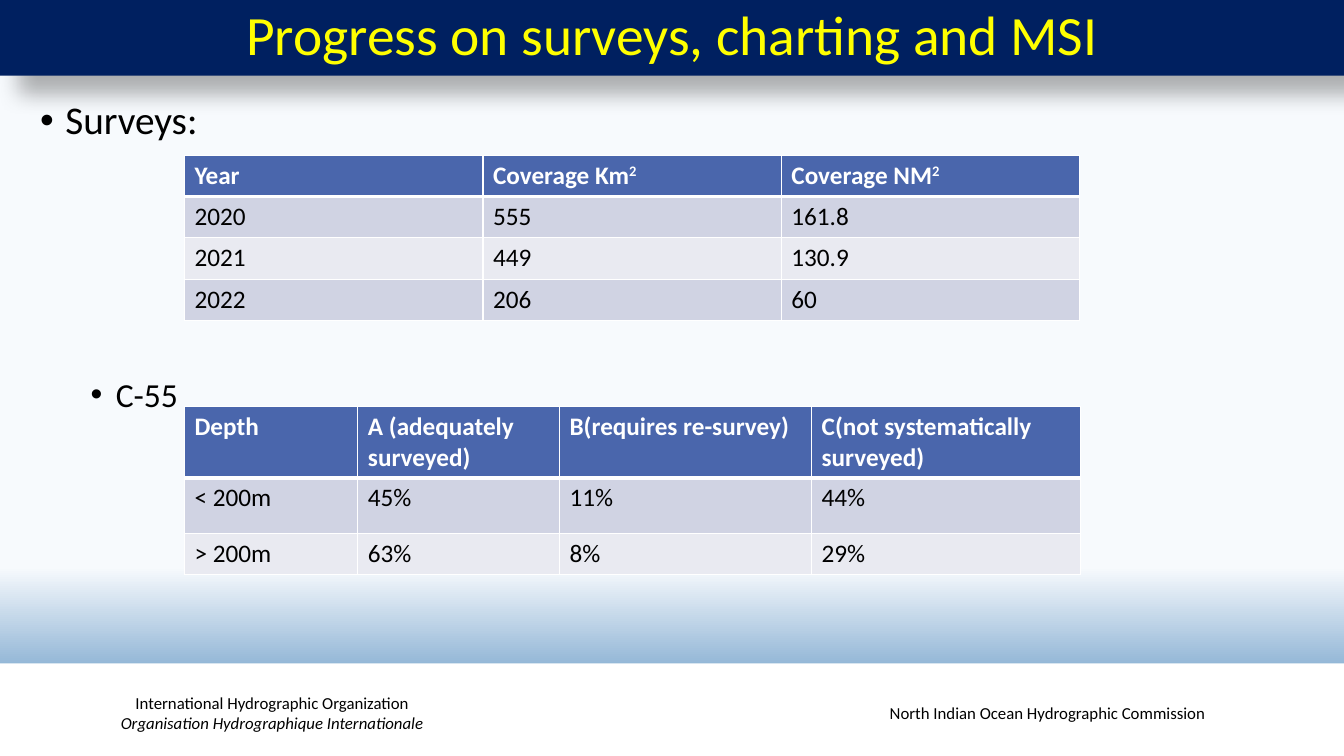
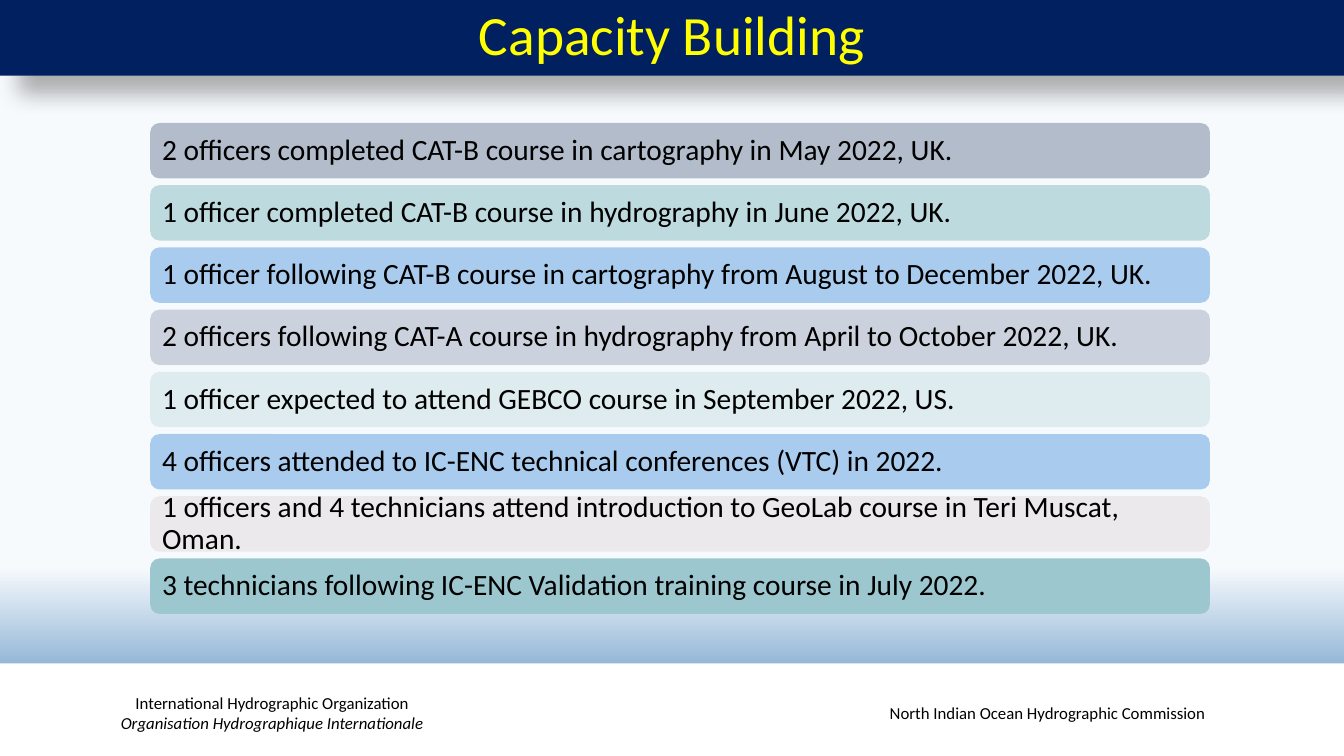
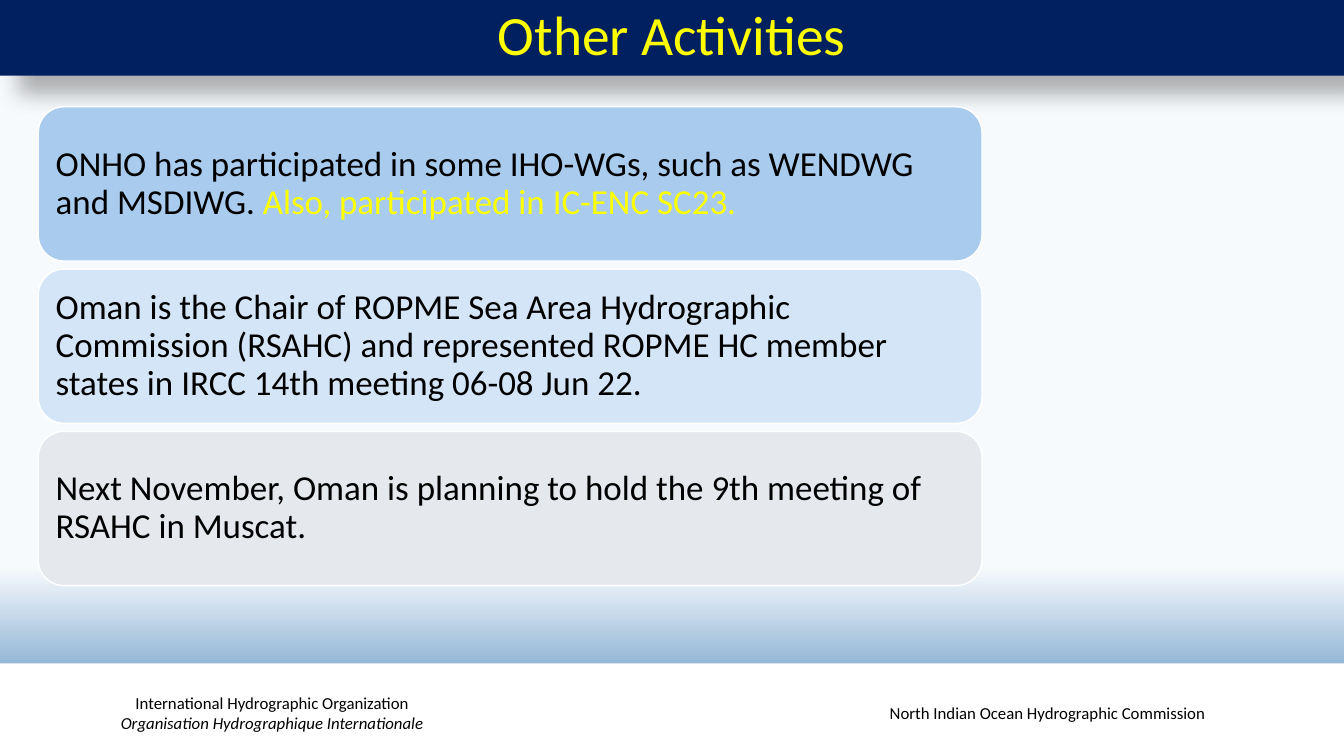
from lxml.etree import SubElement
from pptx import Presentation
from pptx.dml.color import RGBColor
from pptx.enum.shapes import MSO_SHAPE as Shape
from pptx.enum.text import MSO_ANCHOR as Anchor, MSO_AUTO_SIZE as AutoSize, PP_ALIGN as Align
from pptx.oxml.ns import qn
from pptx.util import Inches, Pt

NAVY, YELLOW, WHITE, BLACK = "002060", "FFFF00", "FFFFFF", "000000"
HEADER, BANDS = "4A66AC", ("D0D3E3", "E9EAF1")
SKY, DEEP = "F7FAFD", "3477B2"


def rgb(value):
    """Turn a hex string into a colour."""
    return RGBColor.from_string(value)


def add_solid(parent, value, alpha=None):
    """Append a colour element, with an optional opacity in percent."""
    color = SubElement(parent, qn("a:srgbClr"), val=value)
    if alpha is not None:
        SubElement(color, qn("a:alpha"), val=str(alpha * 1000))


class Deck:
    """Holds the shared style and the current slide."""

    font = "Calibri"

    def __init__(self):
        """Open a presentation with the gradient on its master."""
        self.prs = Presentation()
        self.prs.slide_width, self.prs.slide_height = Inches(13.33), Inches(7.5)
        sky = self.prs.slide_master.background.fill
        sky.gradient()
        sky.gradient_angle = 270
        for stop, position, color in zip(sky.gradient_stops, (0.75, 1), (SKY, DEEP)):
            stop.position = position
            stop.color.rgb = rgb(color)

    def style(self, font, size, color=BLACK, bold=False):
        """Apply the deck font."""
        font.name, font.size, font.bold = self.font, Pt(size), bold
        font.color.rgb = rgb(color)

    def slide(self, title):
        """Start a slide with its title band and footer."""
        layout = self.prs.slide_layouts.get_by_name("Title Only")
        self.page = self.prs.slides.add_slide(layout)
        self.title(title)
        self.panel(Shape.RECTANGLE, 0, 6.58, 13.33, 0.92, WHITE)
        self.footer(0.45, "International Hydrographic Organization\n"
                          "Organisation Hydrographique Internationale")
        self.footer(8.14, "North Indian Ocean Hydrographic Commission")

    def title(self, text):
        """Format the title placeholder as a band with a shadow."""
        band = self.page.shapes.title
        band.left, band.top = Inches(0), Inches(0)
        band.width, band.height = Inches(13.33), Inches(0.75)
        band.fill.solid()
        band.fill.fore_color.rgb = rgb(NAVY)
        effects = SubElement(band._element.spPr, qn("a:effectLst"))
        shadow = SubElement(effects, qn("a:outerShdw"), blurRad=str(Pt(15)),
                            dist=str(Pt(18)), dir=str(45 * 60000),
                            algn="tl", rotWithShape="0")
        add_solid(shadow, BLACK, 30)
        frame = band.text_frame
        frame.text = text
        frame.auto_size, frame.vertical_anchor = AutoSize.NONE, Anchor.MIDDLE
        heading = frame.paragraphs[0]
        heading.alignment, heading.line_spacing = Align.CENTER, 0.9
        self.style(heading.runs[0].font, 39.6, YELLOW)

    def panel(self, kind, left, top, width, height, fill, line=None):
        """Draw a flat filled shape."""
        shape = self.page.shapes.add_shape(
            kind, Inches(left), Inches(top), Inches(width), Inches(height))
        shape.shadow.inherit = False
        shape.fill.solid()
        shape.fill.fore_color.rgb = rgb(fill)
        if line:
            shape.line.color.rgb = rgb(line)
            shape.line.width = Pt(1)
        else:
            shape.line.fill.background()
        return shape

    def text_box(self, left, top, width, height):
        """Add an empty wrapping text box and return its frame."""
        box = self.page.shapes.add_textbox(
            Inches(left), Inches(top), Inches(width), Inches(height))
        box.text_frame.word_wrap = True
        return box.text_frame

    def footer(self, left, text):
        """Write a footer line, any second line in italics."""
        frame = self.text_box(left, 6.87, 4.5, 0.4)
        frame.vertical_anchor = Anchor.MIDDLE
        line = frame.paragraphs[0]
        line.text = text.replace("\n", "\v")
        line.alignment = Align.CENTER
        for index, run in enumerate(line.runs):
            self.style(run.font, 12)
            run.font.italic = index > 0

    def bullets(self, left, top, width, height, items):
        """Write bullets given as text, level, indent, size and space before."""
        frame = self.text_box(left, top, width, height)
        frame.text = "\n".join(item[0] for item in items)
        for bullet, (_, level, indent, size, before) in zip(frame.paragraphs, items):
            properties = bullet._p.get_or_add_pPr()
            properties.set("marL", str(Inches(indent)))
            properties.set("indent", str(Inches(-0.25)))
            SubElement(properties, qn("a:buFont"), typeface="Arial")
            SubElement(properties, qn("a:buChar"), char="•")
            bullet.level, bullet.line_spacing, bullet.space_before = level, 0.9, Pt(before)
            self.style(bullet.runs[0].font, size)

    def table(self, left, top, widths, heights, rows):
        """Add a banded table; a caret in a cell starts a superscript."""
        grid = self.page.shapes.add_table(
            len(rows), len(widths), Inches(left), Inches(top),
            Inches(sum(widths)), Inches(sum(heights))).table
        for column, width in zip(grid.columns, widths):
            column.width = Inches(width)
        for number, (row, height) in enumerate(zip(rows, heights)):
            grid.rows[number].height = Inches(height)
            for column, text in enumerate(row):
                self.cell(grid.cell(number, column), text, number)

    def cell(self, cell, text, row):
        """Fill one table cell and draw its borders."""
        header = row == 0
        properties = cell._tc.get_or_add_tcPr()
        for side in "LRTB":
            heavy = (header and side == "B") or (row == 1 and side == "T")
            border = SubElement(properties, qn(f"a:ln{side}"), w=str(Pt(3 if heavy else 1)))
            add_solid(SubElement(border, qn("a:solidFill")), WHITE)
        cell.fill.solid()
        cell.fill.fore_color.rgb = rgb(HEADER if header else BANDS[(row - 1) % 2])
        for index, part in enumerate(text.split("^")):
            run = cell.text_frame.paragraphs[0].add_run()
            run.text = part
            self.style(run.font, 18, WHITE if header else BLACK, header)
            if index:
                run._r.get_or_add_rPr().set("baseline", "30000")

    def cards(self, left, top, width, bottom, height, size, margin, cards, line=None):
        """Stack rounded cards evenly; each is a fill and its coloured texts."""
        pitch = (bottom - top - height) / (len(cards) - 1)
        for index, (fill, *texts) in enumerate(cards):
            card = self.panel(Shape.ROUNDED_RECTANGLE, left, top + index * pitch,
                              width, height, fill, line)
            frame = card.text_frame
            frame.word_wrap, frame.vertical_anchor = True, Anchor.MIDDLE
            frame.margin_left = frame.margin_right = Inches(margin)
            frame.margin_top = frame.margin_bottom = Inches(margin)
            statement = frame.paragraphs[0]
            statement.alignment, statement.line_spacing = Align.LEFT, 0.9
            for text, color in zip(texts, (BLACK, YELLOW)):
                run = statement.add_run()
                run.text = text
                self.style(run.font, size, color)


def main():
    """Build the three slides."""
    deck = Deck()

    deck.slide("Progress on surveys, charting and MSI")
    deck.bullets(0.3, 0.95, 11.04, 4.05, [
        ("Surveys:", 0, 0.25, 28, 0),
        ("C-55", 1, 0.75, 24, 168),
    ])
    deck.table(1.83, 1.54, [2.96] * 3, [0.41] * 4, [
        ("Year", "Coverage Km^2", "Coverage NM^2"),
        ("2020", "555", "161.8"),
        ("2021", "449", "130.9"),
        ("2022", "206", "60"),
    ])
    deck.table(1.83, 4.03, [1.72, 2, 2.5, 2.67], [0.71, 0.55, 0.41], [
        ("Depth", "A (adequately surveyed)", "B(requires re-survey)",
         "C(not systematically surveyed)"),
        ("< 200m", "45%", "11%", "44%"),
        ("> 200m", "63%", "8%", "29%"),
    ])

    deck.slide("Capacity Building")
    deck.cards(1.49, 1.22, 10.51, 6.09, 0.55, 21, 0.09, [
        ("B2BCCB", "2 officers completed CAT-B course in cartography in May 2022, UK."),
        ("BDDADF", "1 officer completed CAT-B course in hydrography in June 2022, UK."),
        ("A9CCEE", "1 officer following CAT-B course in cartography "
                   "from August to December 2022, UK."),
        ("CCD2DD", "2 officers following CAT-A course in hydrography "
                   "from April to October 2022, UK."),
        ("DEECEF", "1 officer expected to attend GEBCO course in September 2022, US."),
        ("A9CCEE", "4 officers attended to IC-ENC technical conferences (VTC) in 2022."),
        ("EBE9EC", "1 officers and 4 technicians attend introduction "
                   "to GeoLab course in Teri Muscat, Oman."),
        ("9CC7CE", "3 technicians following IC-ENC Validation training course in July 2022."),
    ])

    deck.slide("Other Activities")
    deck.cards(0.38, 1.06, 9.36, 5.81, 1.53, 25, 0.1, [
        ("A9CCEE", "ONHO has participated in some IHO-WGs, such as WENDWG and MSDIWG. ",
         "Also, participated in IC-ENC SC23."),
        ("D4E5F7", "Oman is the Chair of ROPME Sea Area Hydrographic Commission (RSAHC) "
                   "and represented ROPME HC member states in IRCC 14th meeting 06-08 Jun 22."),
        ("E5E9EE", "Next November, Oman is planning to hold the 9th meeting "
                   "of RSAHC in Muscat."),
    ], WHITE)

    deck.prs.save("out.pptx")


if __name__ == "__main__":
    main()
